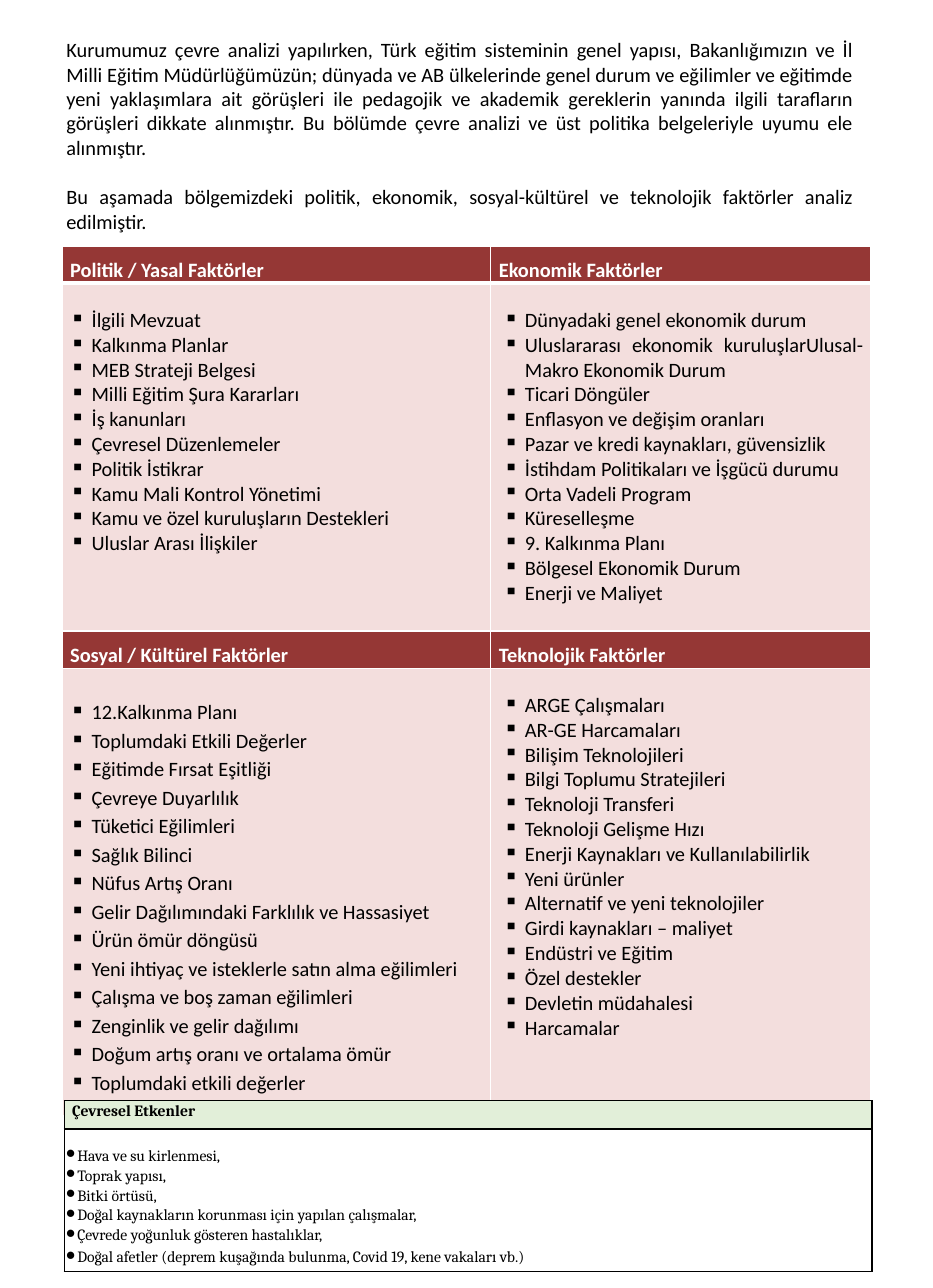
"""Build the environment analysis page with its factor tables."""
from dataclasses import dataclass

from lxml.etree import SubElement
from pptx import Presentation
from pptx.dml.color import RGBColor
from pptx.enum.text import MSO_ANCHOR, PP_ALIGN
from pptx.oxml import parse_xml
from pptx.oxml.ns import nsdecls, qn
from pptx.util import Pt

BLACK = RGBColor(0x00, 0x00, 0x00)
WHITE = RGBColor(0xFF, 0xFF, 0xFF)
MAROON = RGBColor(0x95, 0x37, 0x35)
ROSE = RGBColor(0xF3, 0xDE, 0xDD)
MINT = RGBColor(0xE2, 0xEF, 0xD9)

BODY = {"name": "Calibri", "size": Pt(13), "bold": False, "color": BLACK}
HEADING = BODY | {"bold": True, "color": WHITE}
SMALL = {"name": "Cambria", "size": Pt(10), "bold": False, "color": BLACK}
SMALL_HEADING = SMALL | {"bold": True}


@dataclass
class CellContent:
    """Text of one table cell with its layout."""
    lines: list[str]
    font: dict
    fill: RGBColor | None = None
    bullet: str = ""
    left: float = 0
    hanging: float = 0
    spacing: float = 1
    last_spacing: float | None = None
    top: float = 0
    side: float = 5.2
    anchor: MSO_ANCHOR = MSO_ANCHOR.TOP
    align: PP_ALIGN = PP_ALIGN.JUSTIFY


@dataclass
class TableLayout:
    """Place, grid and borders of one table."""
    left: float
    top: float
    columns: list[float]
    rows: list[float]
    border: RGBColor
    header_rule: float
    cells: list[list[CellContent]]


def heading(text: str) -> CellContent:
    """Describe a maroon heading cell."""
    return CellContent([text], HEADING, MAROON, spacing=1.5, anchor=MSO_ANCHOR.MIDDLE)


def factors(lines: list[str], left: float, spacing: float = 1) -> CellContent:
    """Describe a rose cell holding a bulleted list."""
    return CellContent(lines, BODY, ROSE, "▪", left, 13.7, spacing, top=15.87 * spacing)


POLITICAL = [
    "İlgili Mevzuat", "Kalkınma Planlar", "MEB Strateji Belgesi",
    "Milli Eğitim Şura Kararları", "İş kanunları", "Çevresel Düzenlemeler",
    "Politik İstikrar", "Kamu Mali Kontrol Yönetimi",
    "Kamu ve özel kuruluşların Destekleri", "Uluslar Arası İlişkiler",
]
ECONOMIC = [
    "Dünyadaki genel ekonomik durum",
    "Uluslararası ekonomik kuruluşlarUlusal-Makro Ekonomik Durum",
    "Ticari Döngüler", "Enflasyon ve değişim oranları",
    "Pazar ve kredi kaynakları, güvensizlik",
    "İstihdam Politikaları ve İşgücü durumu", "Orta Vadeli Program",
    "Küreselleşme", "9. Kalkınma Planı", "Bölgesel Ekonomik Durum",
    "Enerji ve Maliyet",
]
SOCIAL = [
    "12.Kalkınma Planı", "Toplumdaki Etkili Değerler", "Eğitimde Fırsat Eşitliği",
    "Çevreye Duyarlılık", "Tüketici Eğilimleri", "Sağlık Bilinci",
    "Nüfus Artış Oranı", "Gelir Dağılımındaki Farklılık ve Hassasiyet",
    "Ürün ömür döngüsü", "Yeni ihtiyaç ve isteklerle satın alma eğilimleri",
    "Çalışma ve boş zaman eğilimleri", "Zenginlik ve gelir dağılımı",
    "Doğum artış oranı ve ortalama ömür", "Toplumdaki etkili değerler",
]
TECHNOLOGICAL = [
    "ARGE Çalışmaları", "AR-GE Harcamaları", "Bilişim Teknolojileri",
    "Bilgi Toplumu Stratejileri", "Teknoloji Transferi", "Teknoloji Gelişme Hızı",
    "Enerji Kaynakları ve Kullanılabilirlik", "Yeni ürünler",
    "Alternatif ve yeni teknolojiler", "Girdi kaynakları – maliyet",
    "Endüstri ve Eğitim", "Özel destekler", "Devletin müdahalesi", "Harcamalar",
]
ENVIRONMENTAL = [
    "Hava ve su kirlenmesi,", "Toprak yapısı,", "Bitki örtüsü,",
    "Doğal kaynakların korunması için yapılan çalışmalar,",
    "Çevrede yoğunluk gösteren hastalıklar,",
    "Doğal afetler (deprem kuşağında bulunma, Covid 19, kene vakaları vb.)",
]
INTRODUCTION = [
    "Kurumumuz çevre analizi yapılırken, Türk eğitim sisteminin genel yapısı, "
    "Bakanlığımızın ve İl Milli Eğitim Müdürlüğümüzün; dünyada ve AB ülkelerinde genel "
    "durum ve eğilimler ve eğitimde yeni yaklaşımlara ait görüşleri ile pedagojik ve "
    "akademik gereklerin yanında ilgili tarafların görüşleri dikkate alınmıştır. Bu "
    "bölümde çevre analizi ve üst politika belgeleriyle uyumu ele alınmıştır.",
    "Bu aşamada bölgemizdeki politik, ekonomik, sosyal-kültürel ve teknolojik faktörler "
    "analiz edilmiştir.",
]

FACTOR_TABLE = TableLayout(
    39.6, 157, [273.6, 242.6], [23.8, 222, 23.8, 285.8], WHITE, 3,
    [[heading("Politik / Yasal Faktörler"), heading("Ekonomik Faktörler")],
     [factors(POLITICAL, 13.7), factors(ECONOMIC, 16.6)],
     [heading("Sosyal / Kültürel Faktörler"), heading("Teknolojik Faktörler")],
     [factors(SOCIAL, 13.7, 1.15), factors(TECHNOLOGICAL, 16.6)]])
ENVIRONMENT_TABLE = TableLayout(
    41, 702.7, [515.5], [18, 91], BLACK, 1,
    [[CellContent(["Çevresel Etkenler"], SMALL_HEADING, MINT, left=5, spacing=1.1,
                  side=0, align=PP_ALIGN.LEFT)],
     [CellContent(ENVIRONMENTAL, SMALL, None, "⚫", 0, 0.72, 1.1, 1.2, 10.5, 0,
                  align=PP_ALIGN.LEFT)]])


def add_span(para, text: str, font: dict) -> None:
    """Add one formatted run to a paragraph."""
    span = para.add_run()
    span.text = text
    for name, value in font.items():
        if name == "color":
            span.font.color.rgb = value
        else:
            setattr(span.font, name, value)


def set_bullet(para, content: CellContent) -> None:
    """Give a paragraph its indent and bullet."""
    properties = para._p.get_or_add_pPr()
    properties.set("marL", str(Pt(content.left)))
    properties.set("indent", str(-Pt(content.hanging)))
    if content.bullet:
        color = SubElement(properties, qn("a:buClr"))
        SubElement(color, qn("a:srgbClr")).set("val", str(BLACK))
        SubElement(properties, qn("a:buChar")).set("char", content.bullet)


def set_borders(cell, color: RGBColor, top: float, bottom: float) -> None:
    """Draw the four borders of a cell."""
    properties = cell._tc.get_or_add_tcPr()
    for side, width in {"L": 1, "R": 1, "T": top, "B": bottom}.items():
        properties.append(parse_xml(
            f'<a:ln{side} {nsdecls("a")} w="{Pt(width)}"><a:solidFill>'
            f'<a:srgbClr val="{color}"/></a:solidFill></a:ln{side}>'))


def fill_cell(cell, content: CellContent) -> None:
    """Write the content into a cell and colour it."""
    if content.fill is None:
        cell.fill.background()
    else:
        cell.fill.solid()
        cell.fill.fore_color.rgb = content.fill
    layout = {"margin_left": Pt(content.side), "margin_right": Pt(content.side),
              "margin_top": Pt(content.top), "margin_bottom": Pt(0),
              "vertical_anchor": content.anchor}
    for name, value in layout.items():
        setattr(cell, name, value)
    frame = cell.text_frame
    for index, line in enumerate(content.lines):
        para = frame.add_paragraph() if index else frame.paragraphs[0]
        set_bullet(para, content)
        para.alignment = content.align
        is_last = index == len(content.lines) - 1
        para.line_spacing = is_last and content.last_spacing or content.spacing
        add_span(para, line, content.font)


def add_factor_table(page, layout: TableLayout) -> None:
    """Add one table to the page."""
    table = page.shapes.add_table(
        len(layout.rows), len(layout.columns), Pt(layout.left), Pt(layout.top),
        Pt(sum(layout.columns)), Pt(sum(layout.rows))).table
    table.first_row = table.horz_banding = False
    for column, width in zip(table.columns, layout.columns):
        column.width = Pt(width)
    for index, (row, height) in enumerate(zip(table.rows, layout.rows)):
        row.height = Pt(height)
        top = layout.header_rule if index == 1 else 1
        bottom = layout.header_rule if index == 0 else 1
        for cell, content in zip(row.cells, layout.cells[index]):
            set_borders(cell, layout.border, top, bottom)
            fill_cell(cell, content)


def add_introduction(page) -> None:
    """Add the opening paragraphs."""
    box = page.shapes.add_textbox(Pt(35.3), Pt(20.2), Pt(515.5), Pt(135.4))
    frame = box.text_frame
    frame.word_wrap = True
    for index, text in enumerate(INTRODUCTION):
        para = frame.add_paragraph() if index else frame.paragraphs[0]
        para.alignment = PP_ALIGN.JUSTIFY
        para.space_before = Pt(15.87 * index)
        add_span(para, text, BODY)


def main() -> None:
    """Build and save the deck."""
    deck = Presentation()
    deck.slide_width, deck.slide_height = Pt(595.4), Pt(822.2)
    page = deck.slides.add_slide(deck.slide_layouts[6])
    add_factor_table(page, FACTOR_TABLE)
    add_introduction(page)
    add_factor_table(page, ENVIRONMENT_TABLE)
    deck.save("out.pptx")


if __name__ == "__main__":
    main()
